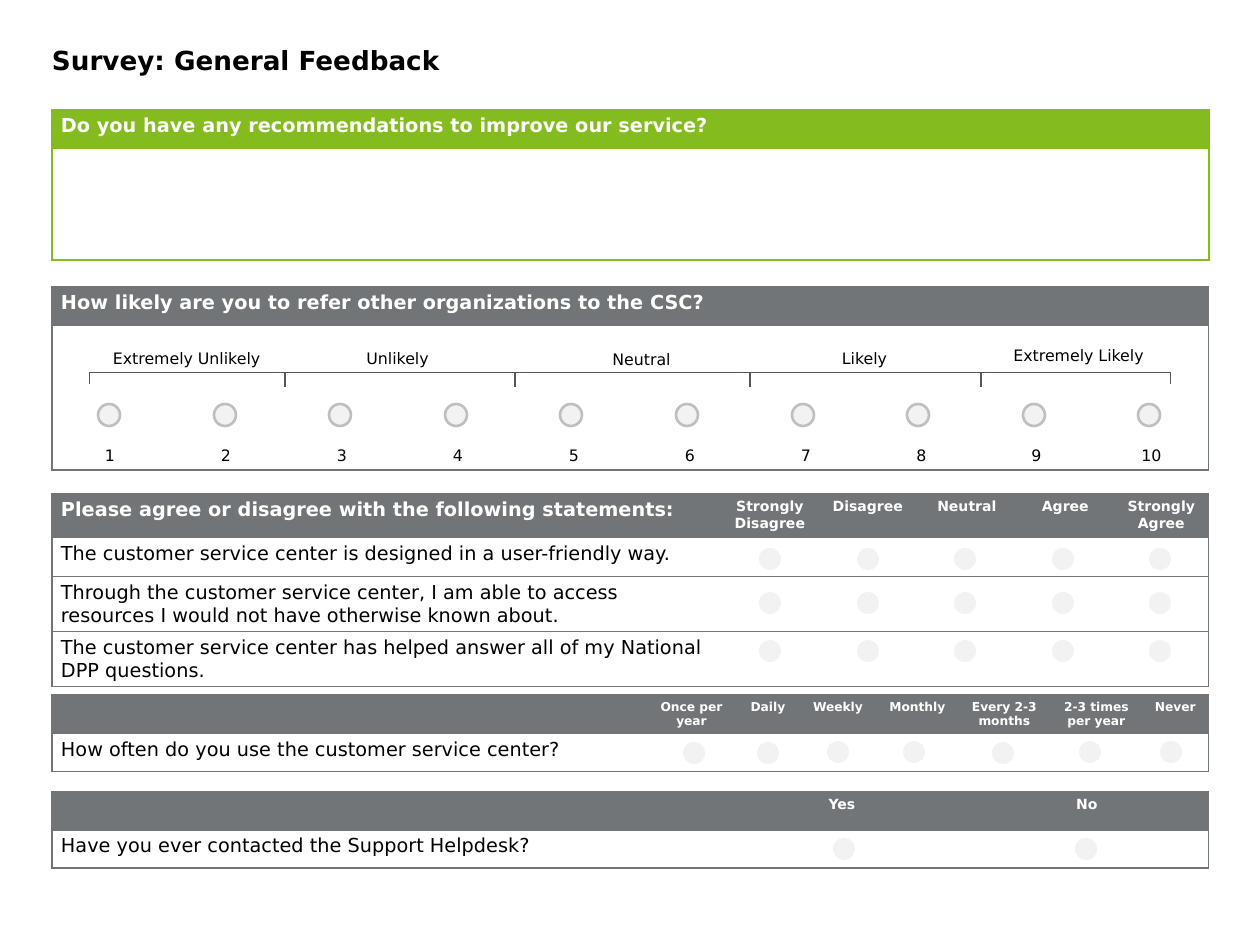
"""Build a one-page general feedback survey form."""
from lxml import etree
from pptx import Presentation
from pptx.dml.color import RGBColor
from pptx.enum.shapes import MSO_CONNECTOR, MSO_SHAPE
from pptx.enum.text import MSO_ANCHOR, MSO_AUTO_SIZE, PP_ALIGN
from pptx.oxml.ns import qn
from pptx.util import Emu, Pt

PX = 914400 / 126
LEFT, CENTER = PP_ALIGN.LEFT, PP_ALIGN.CENTER
TOP, MIDDLE, BOTTOM = MSO_ANCHOR.TOP, MSO_ANCHOR.MIDDLE, MSO_ANCHOR.BOTTOM
ELLIPSE, RECTANGLE, BRACKET = MSO_SHAPE.OVAL, MSO_SHAPE.RECTANGLE, MSO_SHAPE.RIGHT_BRACKET
STRAIGHT = MSO_CONNECTOR.STRAIGHT
NO_AUTOFIT = MSO_AUTO_SIZE.NONE

THEME = {
    "font": "DejaVu Sans",
    "black": "000000", "white": "FFFFFF", "gray": "727578", "green": "84BC20",
    "dot": "F2F2F2", "ring": "BFBFBF", "scale": "53565A",
    "title": 15, "question": 11, "label": 9, "heading": 8, "small": 7,
    "thin": 0.75, "thick": 1.5,
}
LEFT_EDGE, FORM_WIDTH, DOT = 52, 1157, 22


def write_text(frame, text, size, color, bold=False, align=LEFT):
    para = frame.paragraphs[0]
    para.alignment = align
    if not text:
        para._p.get_or_add_endParaRPr().set("sz", str(size * 100))
        return para
    span = para.add_run()
    span.text = text
    values = {"name": THEME["font"], "size": Pt(size), "bold": bold}
    for name, value in values.items():
        setattr(span.font, name, value)
    span.font.color.rgb = RGBColor.from_string(color)
    return para


def draw_shape(kind, box, fill=None, line=None, weight=0):
    shape = page.shapes.add_shape(kind, *[Emu(round(length * PX)) for length in box])
    shape.shadow.inherit = False
    if fill:
        shape.fill.solid()
        shape.fill.fore_color.rgb = RGBColor.from_string(fill)
    else:
        shape.fill.background()
    if line:
        shape.line.color.rgb = RGBColor.from_string(line)
        shape.line.width = Pt(weight)
    else:
        shape.line.fill.background()
    return shape


deck = Presentation()
deck.slide_width, deck.slide_height = Emu(round(1260 * PX)), Emu(round(945 * PX))
page = deck.slides.add_slide(deck.slide_layouts[5])

title = page.shapes.title
bounds = {"left": LEFT_EDGE, "top": 44, "width": FORM_WIDTH, "height": 40}
for name, value in bounds.items():
    setattr(title, name, Emu(round(value * PX)))
title_format = {"margin_left": 0, "margin_top": 0, "margin_right": 0, "margin_bottom": 0,
                "vertical_anchor": TOP, "word_wrap": True, "auto_size": NO_AUTOFIT}
for name, value in title_format.items():
    setattr(title.text_frame, name, value)
write_text(title.text_frame, "Survey: General Feedback", THEME["title"], THEME["black"], True)

sections = [
    {"top": 494, "color": "gray", "heading": "heading",
     "columns": [669, 98, 98, 100, 97, 95], "rows": [44, 39, 54, 55],
     "text": [
         ["Please agree or disagree with the following statements:",
          "Strongly Disagree", "Disagree", "Neutral", "Agree", "Strongly Agree"],
         ["The customer service center is designed in a user-friendly way."],
         ["Through the customer service center, I am able to access resources "
          "I would not have otherwise known about."],
         ["The customer service center has helped answer all of my National DPP questions."]]},
    {"top": 695, "color": "gray", "heading": "small",
     "columns": [594, 91, 62, 78, 81, 93, 91, 67], "rows": [38, 38],
     "text": [
         ["", "Once per year", "Daily", "Weekly", "Monthly",
          "Every 2-3 months", "2-3 times per year", "Never"],
         ["How often do you use the customer service center?"]]},
    {"top": 792, "color": "gray", "heading": "heading",
     "columns": [667, 246, 244], "rows": [38, 38],
     "text": [["", "Yes", "No"], ["Have you ever contacted the Support Helpdesk?"]]},
    {"top": 287, "color": "gray", "heading": "heading",
     "columns": [116] * 7 + [115] * 3, "rows": [38, 145],
     "text": [["How likely are you to refer other organizations to the CSC?"],
              [str(score) for score in range(1, 11)]]},
    {"top": 110, "color": "green", "heading": "heading",
     "columns": [FORM_WIDTH], "rows": [38, 112],
     "text": [["Do you have any recommendations to improve our service?"], [""]]},
]

for section in sections:
    columns, rows = section["columns"], section["rows"]
    box = (LEFT_EDGE, section["top"], sum(columns), sum(rows))
    table = page.shapes.add_table(
        len(rows), len(columns), *[Emu(round(length * PX)) for length in box]).table
    table.first_row = table.horz_banding = False
    for column, width in zip(table.columns, columns):
        column.width = Emu(round(width * PX))
    for row, height in zip(table.rows, rows):
        row.height = Emu(round(height * PX))
    is_scale = len(columns) == 10
    if is_scale:
        table.cell(0, 0).merge(table.cell(0, 9))
    for row_index, texts in enumerate(section["text"]):
        is_header = row_index == 0
        for column_index in range(len(columns)):
            cell = table.cell(row_index, column_index)
            text = texts[column_index] if column_index < len(texts) else ""
            is_score = is_scale and not is_header
            cell_format = {
                "margin_left": Emu(round(9 * PX)), "margin_right": Emu(round(9 * PX)),
                "margin_top": Emu(round(5 * PX)), "margin_bottom": Emu(round(5 * PX)),
                "vertical_anchor": BOTTOM if is_score else TOP}
            for name, value in cell_format.items():
                setattr(cell, name, value)
            size = "label" if is_score else "question" if column_index == 0 and text else section["heading"]
            write_text(cell.text_frame, text, THEME[size],
                       THEME["white" if is_header else "black"], is_header,
                       CENTER if is_score or column_index else LEFT)
            edges = {"a:lnL": column_index == 0, "a:lnR": column_index == len(columns) - 1,
                     "a:lnT": True, "a:lnB": True}
            for tag, visible in edges.items():
                edge = etree.SubElement(cell._tc.get_or_add_tcPr(), qn(tag),
                                        w=str(int(Pt(THEME["thin"]))))
                if visible:
                    paint = etree.SubElement(edge, qn("a:solidFill"))
                    etree.SubElement(paint, qn("a:srgbClr"), val=THEME[section["color"]])
                else:
                    etree.SubElement(edge, qn("a:noFill"))
            if is_header:
                cell.fill.solid()
                cell.fill.fore_color.rgb = RGBColor.from_string(THEME[section["color"]])
            else:
                cell.fill.background()

statement_lefts = [round(759 + 97.6 * index) for index in range(5)]
choice_rows = [(top, statement_lefts) for top in (548, 592, 640)]
choice_rows += [(742, [683, 757, 992]), (741, [827, 903, 1079, 1160]), (838, [833, 1075])]
for top, lefts in choice_rows:
    for left in lefts:
        draw_shape(ELLIPSE, (left, top, DOT, DOT), THEME["dot"])
for index in range(10):
    left = round(98 + 115.6 * index)
    draw_shape(ELLIPSE, (left, 404, DOT, DOT), THEME["dot"], THEME["ring"], THEME["thick"])

bracket = draw_shape(BRACKET, (624, -162, 12, 1081), None, THEME["scale"], THEME["thin"])
bracket.rotation = 270
bracket.adjustments[0] = 0
for x in (285, 515, 750, 981):
    ends = [Emu(round(length * PX)) for length in (x, 372, x, 387)]
    tick = page.shapes.add_connector(STRAIGHT, *ends)
    tick.line.color.rgb = RGBColor.from_string(THEME["scale"])
    tick.line.width = Pt(THEME["thin"])
    etree.SubElement(tick._element.spPr, qn("a:effectLst"))

scale_labels = [("Extremely Unlikely", 89, 345, 195), ("Unlikely", 300, 345, 195),
                ("Neutral", 544, 346, 195), ("Likely", 758, 345, 213),
                ("Extremely Likely", 981, 342, 195)]
label_format = {"margin_left": 0, "margin_right": 0, "margin_top": Emu(round(12 * PX)),
                "margin_bottom": Emu(round(12 * PX)), "vertical_anchor": MIDDLE,
                "word_wrap": True}
for text, left, top, width in scale_labels:
    label = draw_shape(RECTANGLE, (left, top, width, 25), THEME["white"])
    for name, value in label_format.items():
        setattr(label.text_frame, name, value)
    para = write_text(label.text_frame, text, THEME["label"], THEME["black"], align=CENTER)
    para.line_spacing = 1.06

deck.save("out.pptx")
